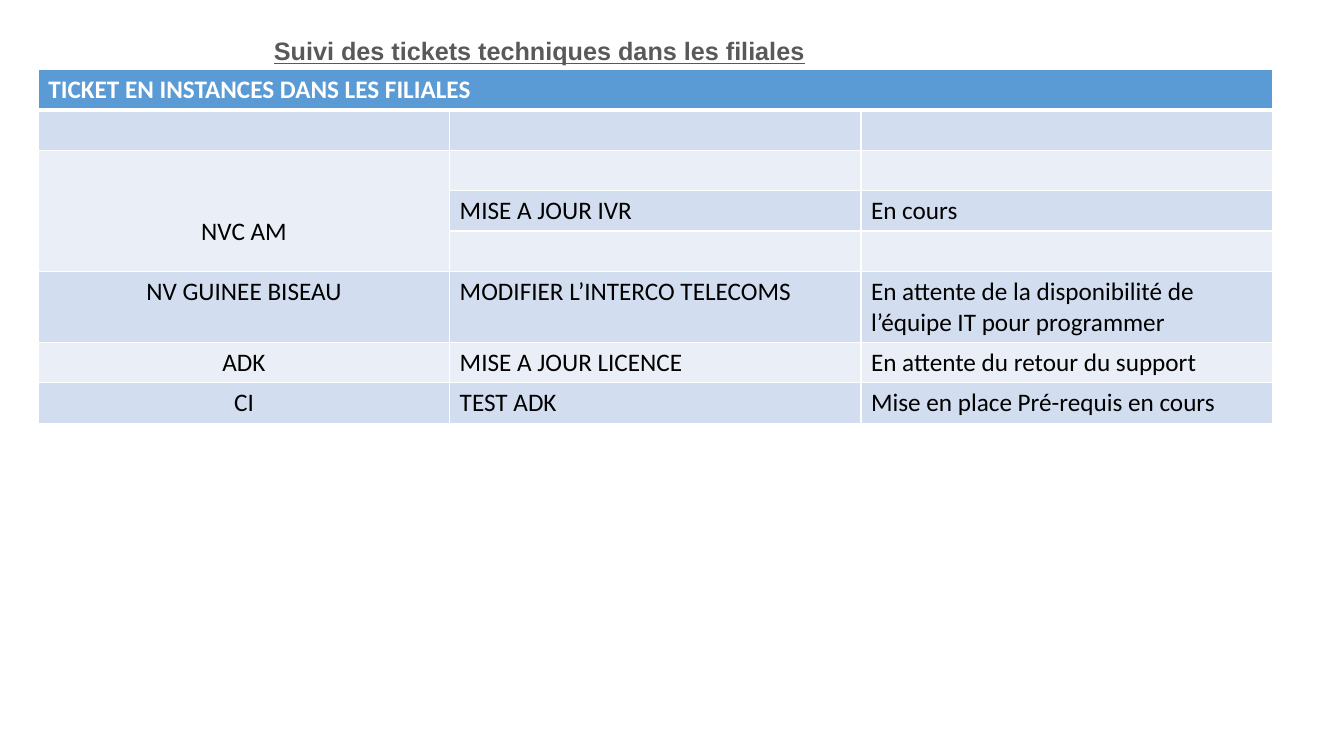
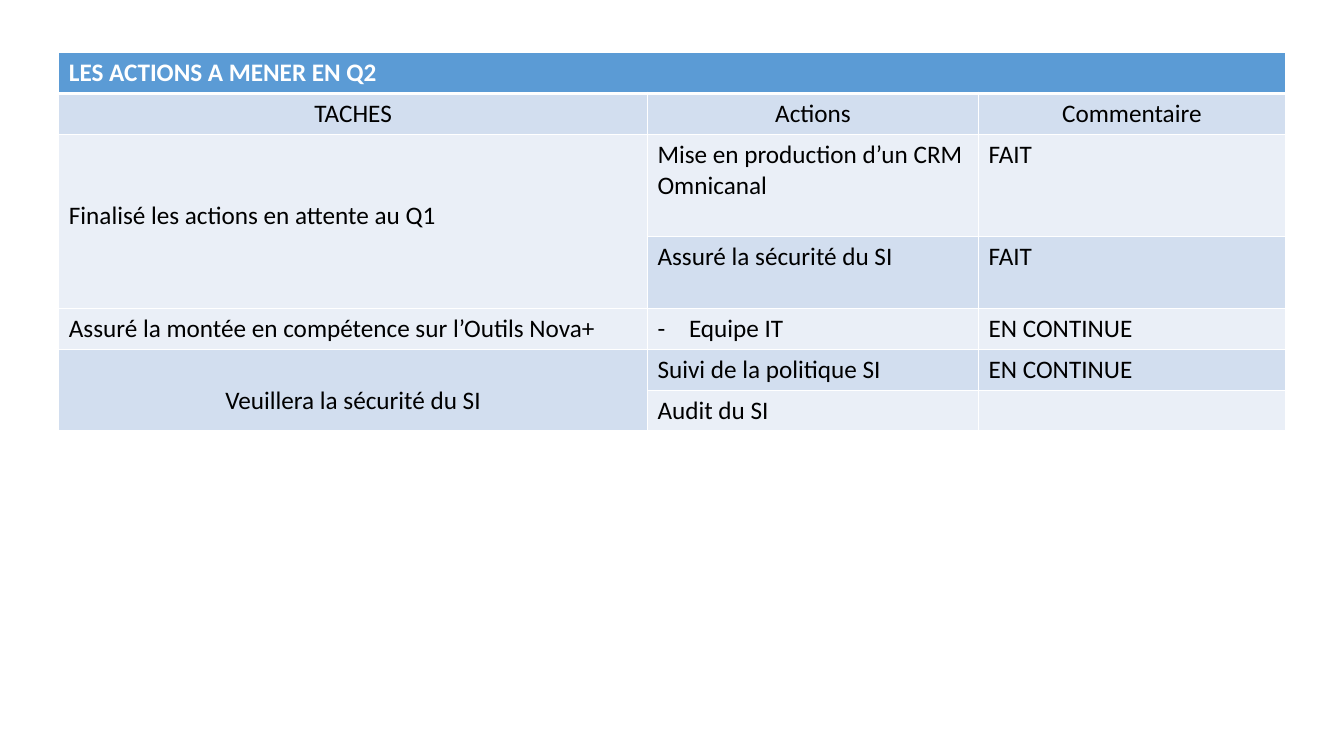
from lxml import etree
from pptx import Presentation
from pptx.dml.color import RGBColor
from pptx.enum import text as t
from pptx.oxml import ns
from pptx.util import Pt

HEAD = RGBColor(0x5B, 0x9B, 0xD5)
BANDS = [RGBColor(0xEA, 0xEF, 0xF7), RGBColor(0xD2, 0xDE, 0xEF)]
WHITE = RGBColor(0xFF, 0xFF, 0xFF)
BLACK = RGBColor(0, 0, 0)
GREY = RGBColor(0x59, 0x59, 0x59)
LINE = 22   # height of one line of text
ROW = 29.2  # height of a row with one line


def write(frame, words, font="Calibri", color=BLACK, bold=False,
          under=False, align=None, dash=False):
    para = frame.paragraphs[0]
    para.alignment = align
    if dash:
        props = para._p.get_or_add_pPr()
        props.set("marL", str(Pt(22.5)))
        props.set("indent", str(-Pt(22.5)))
        etree.SubElement(props, ns.qn("a:buFont")).set("typeface", font)
        etree.SubElement(props, ns.qn("a:buChar")).set("char", "-")
    run = para.add_run()
    run.text = words
    run.font.name = font
    run.font.size = Pt(18)
    run.font.color.rgb = color
    run.font.bold = bold
    run.font.underline = under


def grid(slide, left, top, cols, heights, rows, spans, mid, dashes=()):
    """spans: cell -> (rows covered, lines above its text)."""
    table = slide.shapes.add_table(
        len(rows), len(cols), Pt(left), Pt(top),
        Pt(sum(cols)), Pt(sum(heights))).table
    for col, width in zip(table.columns, cols):
        col.width = Pt(width)
    for row, height in zip(table.rows, heights):
        row.height = Pt(height)
    for r, line in enumerate(rows):
        for c in range(len(cols)):
            cell = table.cell(r, c)
            cell.fill.solid()
            cell.fill.fore_color.rgb = BANDS[r % 2] if r else HEAD
            words = line[c] if c < len(line) else ""
            if words:
                write(cell.text_frame, words, bold=r == 0,
                      color=BLACK if r else WHITE,
                      align=t.PP_ALIGN.CENTER if (r, c) in mid else None,
                      dash=(r, c) in dashes)
    # Thick rule under the heading
    for cell in table.rows[0].cells:
        edge = etree.Element(ns.qn("a:lnB"), w=str(Pt(3)))
        fill = etree.SubElement(edge, ns.qn("a:solidFill"))
        etree.SubElement(fill, ns.qn("a:srgbClr")).set("val", str(WHITE))
        cell._tc.get_or_add_tcPr().insert(0, edge)
    table.cell(0, 0).merge(table.cell(0, len(cols) - 1))
    for (r, c), (count, above) in spans.items():
        cell = table.cell(r, c)
        cell.merge(table.cell(r + count - 1, c))
        cell.margin_top = Pt(3.6 + above * LINE)


deck = Presentation()
deck.slide_width, deck.slide_height = Pt(960), Pt(540)
blank = deck.slide_layouts[6]

# Slide 1: open tickets
slide = deck.slides.add_slide(blank)
box = slide.shapes.add_textbox(Pt(188.6), Pt(21.6), Pt(397.4), Pt(28.8))
box.text_frame.word_wrap = False
box.text_frame.vertical_anchor = t.MSO_ANCHOR.MIDDLE
write(box.text_frame, "Suivi des tickets techniques dans les filiales",
      font="Arial", color=GREY, bold=True, under=True,
      align=t.PP_ALIGN.JUSTIFY)

tickets = [
    ["TICKET EN INSTANCES DANS LES FILIALES"],
    [],
    ["NVC AM"],
    ["", "MISE A JOUR IVR", "En cours"],
    [],
    ["NV GUINEE BISEAU", "MODIFIER L’INTERCO TELECOMS",
     "En attente de la disponibilité de l’équipe IT pour programmer"],
    ["ADK", "MISE A JOUR LICENCE", "En attente du retour du support"],
    ["CI", "TEST ADK", "Mise en place Pré-requis en cours"],
]
grid(slide, 27.4, 49.7, [293.8] * 3,
     [28.8] * 5 + [50.8] + [28.8] * 2, tickets,
     spans={(2, 0): (3, 2)}, mid=[(r, 0) for r in range(1, 8)])

# Slide 2: actions for the quarter
slide = deck.slides.add_slide(blank)
actions = [
    ["LES ACTIONS A MENER EN Q2"],
    ["TACHES", "Actions", "Commentaire"],
    ["Finalisé les actions en attente au Q1",
     "Mise en production d’un CRM Omnicanal", "FAIT"],
    ["", "Assuré la sécurité du SI", "FAIT"],
    ["Assuré la montée en compétence sur l’Outils Nova+",
     "Equipe IT", "EN CONTINUE"],
    ["Veuillera la sécurité du SI", "Suivi de la politique SI",
     "EN CONTINUE"],
    ["", "Audit du SI"],
]
grid(slide, 42, 37.5, [420.5, 236.5, 219],
     [ROW, ROW, ROW + 2 * LINE, ROW + LINE, ROW, ROW, ROW], actions,
     spans={(2, 0): (2, 2), (5, 0): (2, 1)},
     mid=[(1, 0), (1, 1), (1, 2), (5, 0)], dashes=[(4, 1)])

deck.save("out.pptx")
